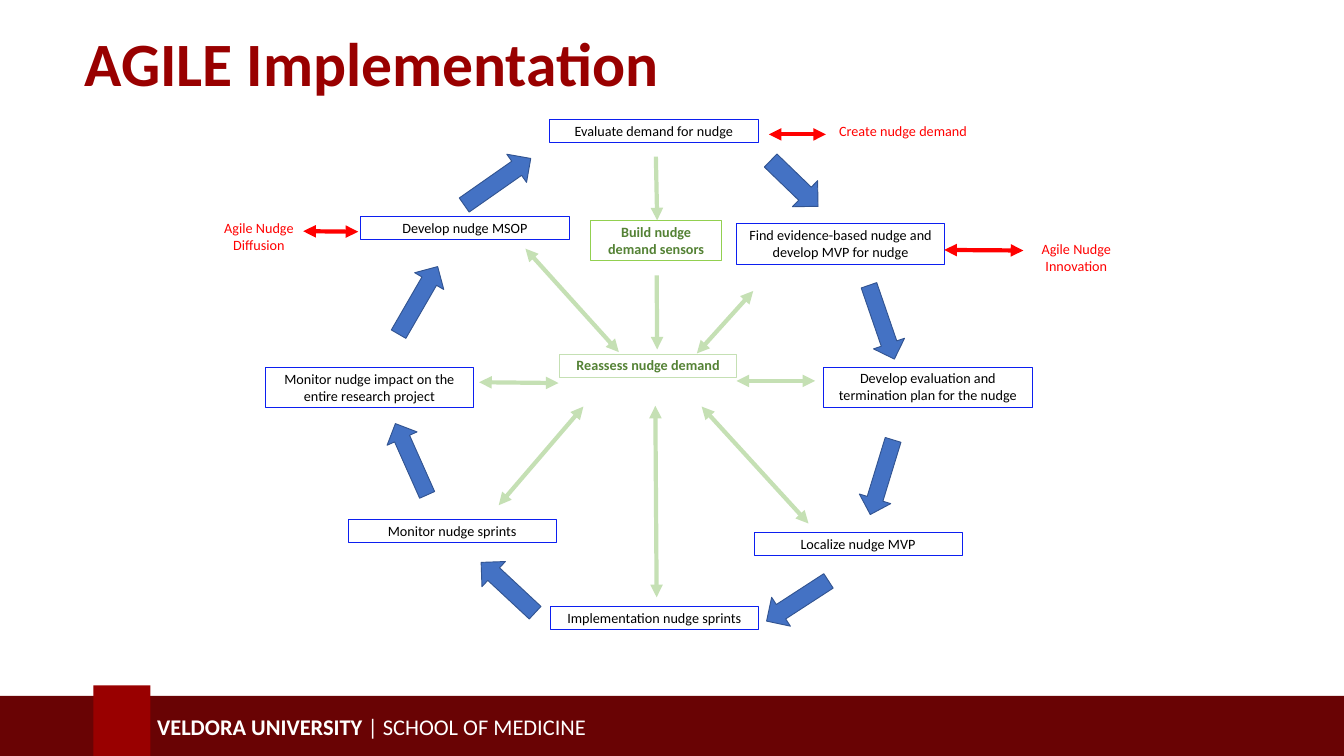
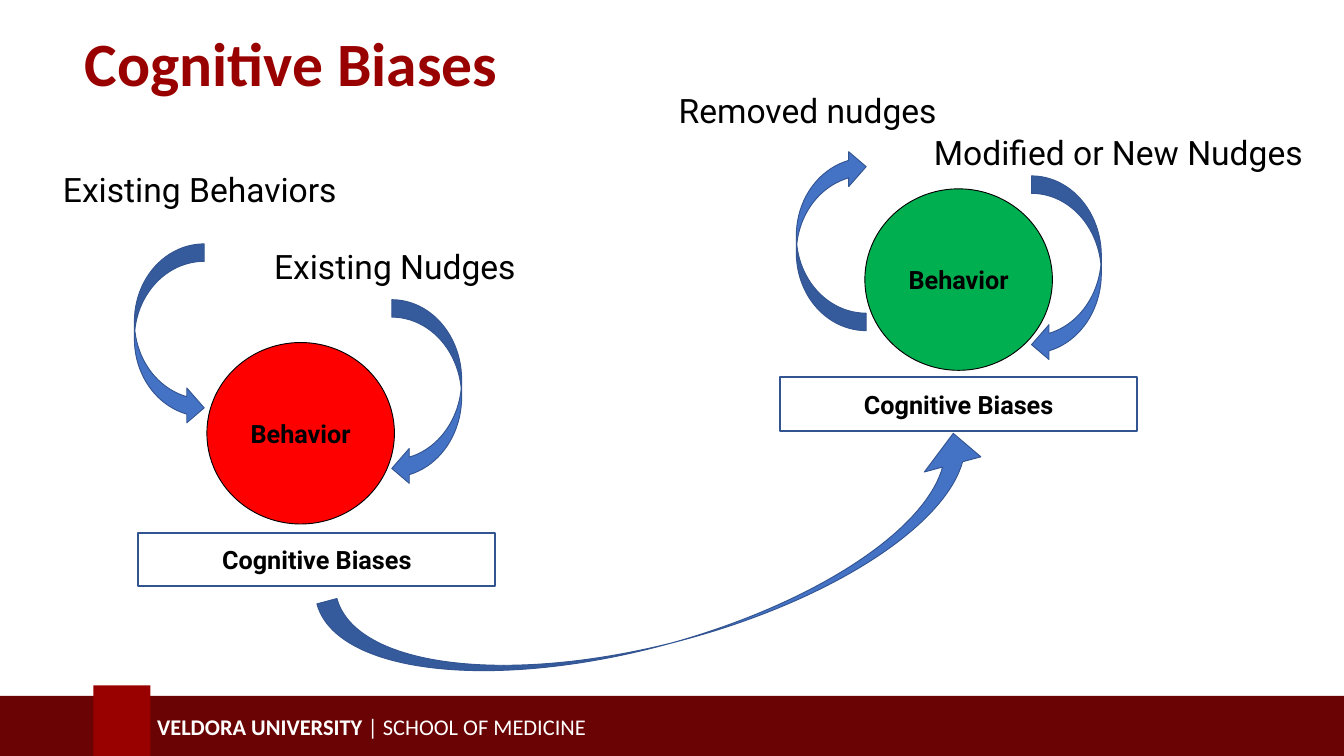
from dataclasses import dataclass

from lxml import etree
from pptx import Presentation
from pptx.dml.color import RGBColor
from pptx.enum import shapes as kinds
from pptx.enum import text as t
from pptx.oxml import ns
from pptx.util import Cm, Pt

COLORS = {
    "maroon": "690304",
    "crimson": "990000",
    "white": "FFFFFF",
    "black": "000000",
    "red": "FF0000",
    "step": "0C1FF0",
    "mint": "C5E0B4",
    "lime": "92D050",
    "forest": "548235",
    "blue": "4472C4",
    "navy": "325491",
    "green": "00B050",
}
SHAPE = kinds.MSO_SHAPE
CENTER = t.PP_ALIGN.CENTER
MIDDLE = t.MSO_ANCHOR.MIDDLE


@dataclass
class Area:
    left: float
    top: float
    width: float
    height: float

    def lengths(self) -> list:
        return [Cm(self.left), Cm(self.top), Cm(self.width), Cm(self.height)]


@dataclass
class Note:
    text: str
    left: float
    top: float
    lines: int = 1
    width: float = 7.87
    color: str = "black"
    border: str | None = "step"
    bold: bool = False

    def area(self) -> Area:
        return Area(self.left, self.top, self.width, 0.2 + 0.66 * self.lines)


@dataclass
class Link:
    start: tuple[float, float]
    end: tuple[float, float]
    color: str = "mint"
    both_ways: bool = True


@dataclass
class Arrow:
    area: Area
    rotation: float = 0
    kind: SHAPE = SHAPE.RIGHT_ARROW
    adjustments: tuple[float, ...] = ()
    flipped: bool = False


@dataclass
class Behavior:
    circle: Area
    biases: Area
    color: str


@dataclass
class Label:
    text: str
    area: Area


STEPS = [
    Note("Evaluate demand for nudge", 20.78, 4.52),
    Note("Find evidence-based nudge and develop MVP for nudge", 27.84, 8.46, 2),
    Note("Develop evaluation and termination plan for the nudge", 31.14, 13.87, 2),
    Note("Localize nudge MVP", 28.5, 20.14),
    Note("Implementation nudge sprints", 20.8, 22.94),
    Note("Monitor nudge sprints", 13.16, 19.63),
    Note("Monitor nudge impact on the entire research project", 10.03, 13.89, 2),
    Note("Develop nudge MSOP", 13.64, 8.18),
]
HUB = [
    Note("Reassess nudge demand", 21.16, 13.39, 1, 6.68, "forest", "mint", True),
    Note("Build nudge demand sensors", 22.33, 8.33, 2, 4.95, "forest", "lime", True),
]
PHASES = [
    Note("Create nudge demand", 30.2, 4.52, 1, 7.87, "red", None),
    Note("Agile Nudge Innovation", 38.35, 8.99, 2, 4.67, "red", None),
    Note("Agile Nudge Diffusion", 7.77, 8.18, 2, 4.04, "red", None),
]
LINKS = [
    Link((35.69, 9.45), (38.68, 9.47), "red"),
    Link((29.06, 5.08), (31.22, 5.08), "red"),
    Link((11.46, 8.74), (13.54, 8.76), "red"),
    Link((27.84, 14.4), (30.81, 14.4)),
    Link((26.52, 15.37), (30.56, 19.79)),
    Link((28.47, 11), (26.34, 13.36)),
    Link((18.11, 14.45), (21.11, 14.48)),
    Link((24.82, 22.58), (24.77, 15.34)),
    Link((19.86, 9.4), (23.39, 13.31)),
    Link((18.85, 19.1), (22.05, 15.37)),
    Link((24.82, 10.41), (24.84, 13.21), both_ways=False),
    Link((24.79, 5.92), (24.84, 8.33), both_ways=False),
]
CYCLE_ARROWS = [
    Arrow(Area(28.78, 6.25, 2.49, 1.37), 44),
    Arrow(Area(31.85, 11.56, 2.95, 1.24), 71),
    Arrow(Area(31.85, 17.42, 2.95, 1.24), 107),
    Arrow(Area(28.75, 22.07, 2.79, 1.3), 147),
    Arrow(Area(17.81, 21.56, 2.79, 1.3), 223),
    Arrow(Area(14.07, 16.74, 2.95, 1.24), 246),
    Arrow(Area(14.33, 10.72, 2.95, 1.27), 300),
    Arrow(Area(17.27, 6.22, 3.07, 1.3), 325),
]
BEFORE = Behavior(Area(7.82, 12.95, 7.09, 6.86), Area(5.23, 20.14, 13.49, 2.03), "red")
AFTER = Behavior(Area(32.69, 7.14, 7.09, 6.86), Area(29.49, 14.27, 13.49, 2.03), "green")
CURVES = [
    Arrow(Area(5.08, 9.22, 2.64, 6.86), kind=SHAPE.CURVED_RIGHT_ARROW),
    Arrow(Area(14.81, 11.33, 2.64, 7.04), kind=SHAPE.CURVED_LEFT_ARROW),
    Arrow(Area(12.17, 19.38, 26.01, 4.9), 345, SHAPE.CURVED_UP_ARROW, (0.16, 0.452, 0.23)),
    Arrow(Area(30.1, 5.64, 2.64, 6.86), 180, SHAPE.CURVED_RIGHT_ARROW, flipped=True),
    Arrow(Area(38.99, 6.65, 2.64, 7.04), kind=SHAPE.CURVED_LEFT_ARROW),
]
LABELS = [
    Label("Existing Behaviors", Area(2.13, 6.25, 11.3, 1.8)),
    Label("Existing Nudges", Area(10.11, 9.19, 9.96, 1.8)),
    Label("Removed nudges", Area(25.4, 3.28, 10.69, 1.8)),
    Label("Modified or New Nudges", Area(35.05, 4.88, 14.88, 1.8)),
]


def rgb(name: str) -> RGBColor:
    return RGBColor.from_string(COLORS[name])


def write(box, text: str, *, size: float, color: str = "black", font: str = "Calibri",
          bold: bool = False, align=t.PP_ALIGN.LEFT, anchor=t.MSO_ANCHOR.TOP,
          wrap: bool = True) -> None:
    frame = box.text_frame
    frame.word_wrap = wrap
    frame.vertical_anchor = anchor
    para = frame.paragraphs[0]
    para.alignment = align
    span = para.add_run()
    span.text = text
    span.font.size = Pt(size)
    span.font.name = font
    span.font.bold = bold
    span.font.color.rgb = rgb(color)


def add_box(page, kind, area: Area, fill: str | None = None,
            border: str | None = None, weight: float = 1):
    box = page.shapes.add_shape(kind, *area.lengths())
    box.shadow.inherit = False
    if fill:
        box.fill.solid()
        box.fill.fore_color.rgb = rgb(fill)
    else:
        box.fill.background()
    if border:
        box.line.color.rgb = rgb(border)
        box.line.width = Pt(weight)
    else:
        box.line.fill.background()
    return box


def add_note(page, note: Note) -> None:
    if note.border:
        box = add_box(page, SHAPE.RECTANGLE, note.area(), border=note.border, weight=0.75)
    else:
        box = page.shapes.add_textbox(*note.area().lengths())
    frame = box.text_frame
    frame.margin_left = frame.margin_right = Cm(0.2)
    frame.margin_top = frame.margin_bottom = Cm(0.1)
    write(box, note.text, size=15.2, color=note.color, bold=note.bold, align=CENTER)


def add_link(page, link: Link) -> None:
    points = [Cm(value) for value in (*link.start, *link.end)]
    line = page.shapes.add_connector(kinds.MSO_CONNECTOR.STRAIGHT, *points)
    line.line.color.rgb = rgb(link.color)
    line.line.width = Pt(4.5)
    stroke = line.line._get_or_add_ln()
    for end in ("a:headEnd", "a:tailEnd") if link.both_ways else ("a:tailEnd",):
        etree.SubElement(stroke, ns.qn(end), type="triangle")
    etree.SubElement(line.element.spPr, ns.qn("a:effectLst"))


def add_arrow(page, arrow: Arrow) -> None:
    box = add_box(page, arrow.kind, arrow.area, "blue", "navy")
    box.rotation = arrow.rotation
    for index, value in enumerate(arrow.adjustments):
        box.adjustments[index] = value
    if arrow.flipped:
        box.element.spPr.find(ns.qn("a:xfrm")).set("flipH", "1")


def add_behavior(page, behavior: Behavior) -> None:
    circle = add_box(page, SHAPE.OVAL, behavior.circle, behavior.color, "black")
    biases = add_box(page, SHAPE.RECTANGLE, behavior.biases, border="navy", weight=2.25)
    for box, text in ((circle, "Behavior"), (biases, "Cognitive Biases")):
        write(box, text, size=27, font="Roboto", bold=True, align=CENTER, anchor=MIDDLE)


def add_label(page, label: Label) -> None:
    box = page.shapes.add_textbox(*label.area.lengths())
    write(box, label.text, size=36, font="Roboto", wrap=False)
    box.text_frame.auto_size = t.MSO_AUTO_SIZE.SHAPE_TO_FIT_TEXT


def add_page(deck, title: str):
    page = deck.slides.add_slide(deck.slide_layouts[5])
    write(page.shapes.title, title, size=66, color="crimson", bold=True, anchor=MIDDLE)
    page.shapes.title.text_frame.paragraphs[0].line_spacing = 0.9
    return page


def set_up_layout(layout, page) -> None:
    title = layout.placeholders[0]
    title.left, title.top, title.width, title.height = Area(2.95, 0.58, 44.48, 3.89).lengths()
    band = add_box(page, SHAPE.RECTANGLE, Area(-0.18, 26.31, 51.28, 2.54), "maroon")
    tab = add_box(page, SHAPE.RECTANGLE, Area(3.53, 25.91, 2.16, 2.95), "crimson")
    school = page.shapes.add_textbox(*Area(5.69, 26.82, 22.28, 1.27).lengths())
    write(school, "VELDORA UNIVERSITY ", size=24, color="white", bold=True, anchor=MIDDLE)
    write(school, "| SCHOOL OF MEDICINE", size=24, color="white", anchor=MIDDLE)
    for number, box in enumerate((band, tab, school), start=20):
        box.element.nvSpPr.cNvPr.set("id", str(number))
        layout.shapes.element.append(box.element)


def draw_implementation(page) -> None:
    for note in HUB + STEPS + PHASES:
        add_note(page, note)
    for link in LINKS:
        add_link(page, link)
    for arrow in CYCLE_ARROWS:
        add_arrow(page, arrow)


def draw_biases(page) -> None:
    add_behavior(page, BEFORE)
    for arrow in CURVES:
        add_arrow(page, arrow)
    add_behavior(page, AFTER)
    for label in LABELS:
        add_label(page, label)


def main() -> None:
    deck = Presentation()
    deck.slide_width, deck.slide_height = Cm(50.8), Cm(28.58)
    implementation = add_page(deck, "AGILE Implementation")
    set_up_layout(deck.slide_layouts[5], implementation)
    draw_implementation(implementation)
    draw_biases(add_page(deck, "Cognitive Biases"))
    deck.save("out.pptx")


if __name__ == "__main__":
    main()
